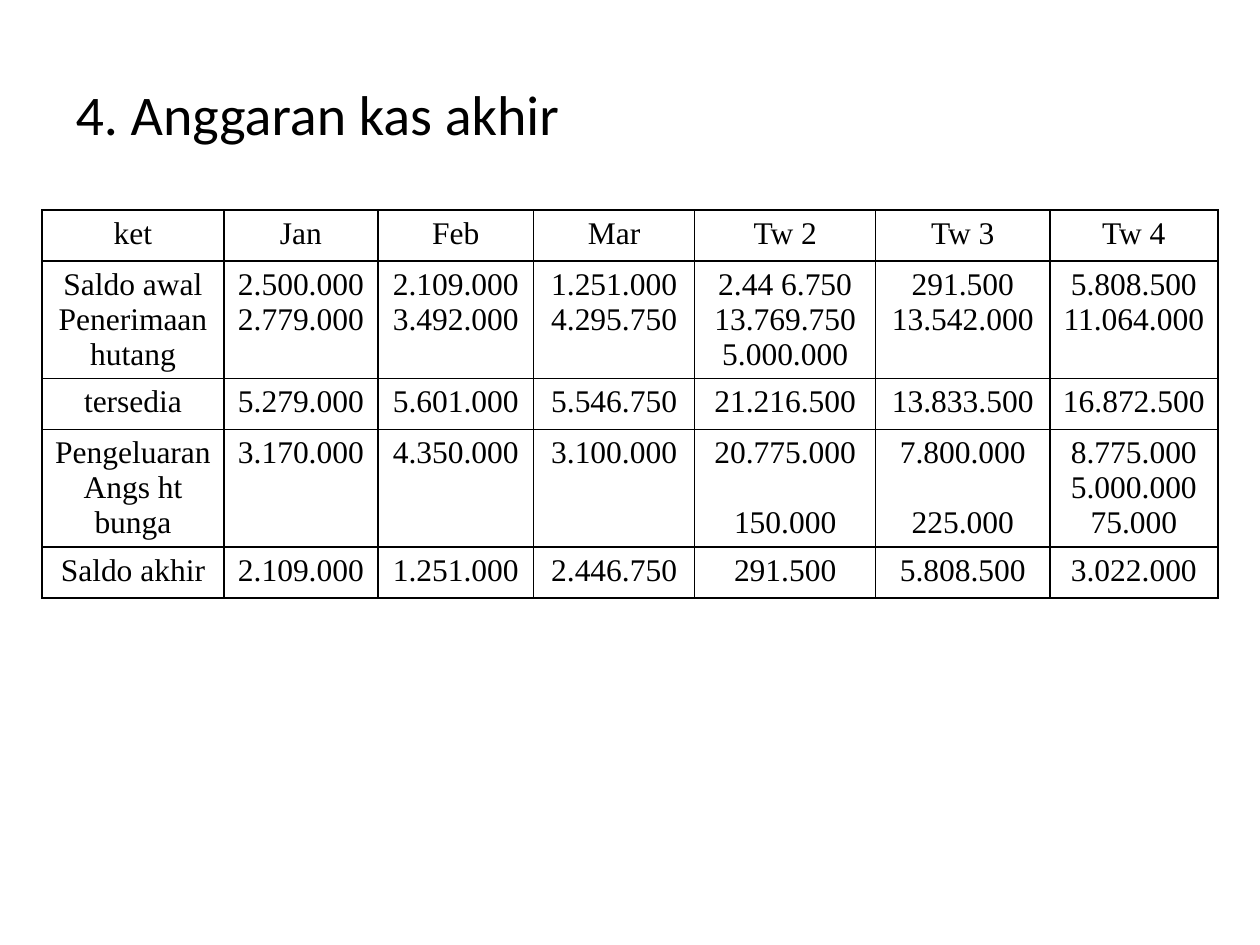
import pptx
import pptx.util
import pptx.dml.color
import pptx.enum.text
import pptx.oxml

Pt = pptx.util.Pt
ALIGN = pptx.enum.text.PP_ALIGN

# Content: a cell lists its lines; None leaves a line's height open
TITLE = "4. Anggaran kas akhir"
BUDGET = [
    [["ket"], ["Jan"], ["Feb"], ["Mar"], ["Tw 2"], ["Tw 3"], ["Tw 4"]],
    [["Saldo awal", "Penerimaan", "hutang"],
     ["2.500.000", "2.779.000"],
     ["2.109.000", "3.492.000"],
     ["1.251.000", "4.295.750"],
     ["2.44 6.750", "13.769.750", "5.000.000"],
     ["291.500", "13.542.000"],
     ["5.808.500", "11.064.000"]],
    [["tersedia"], ["5.279.000"], ["5.601.000"], ["5.546.750"],
     ["21.216.500"], ["13.833.500"], ["16.872.500"]],
    [["Pengeluaran", "Angs ht", "bunga"],
     ["3.170.000"], ["4.350.000"], ["3.100.000"],
     ["20.775.000", None, "150.000"],
     ["7.800.000", None, "225.000"],
     ["8.775.000", "5.000.000", "75.000"]],
    [["Saldo akhir"], ["2.109.000"], ["1.251.000"], ["2.446.750"],
     ["291.500"], ["5.808.500"], ["3.022.000"]],
]

THEME = {
    "ink": "000000",
    "title_font": "Calibri", "title_size": 32,
    "table_font": "Times New Roman", "table_size": 18,
    "border": 1,
}

# Layout
SLIDE_W, SLIDE_H = 720, 540
TITLE_BOX = (36, 42, 648, 60)
TABLE_LEFT, TABLE_TOP = 24, 120
COLUMN_WIDTHS = [104, 88, 89, 92, 103.5, 99.5, 96]
LINE_HEIGHT = 20
ROW_HEIGHTS = {1: 29.2, 3: 67}


def style_font(font, part):
    font.name = THEME[part + "_font"]
    font.size = Pt(THEME[part + "_size"])
    font.color.rgb = pptx.dml.color.RGBColor.from_string(THEME["ink"])


def add_borders(cell):
    properties = cell._tc.get_or_add_tcPr()
    for side in ("lnL", "lnR", "lnT", "lnB"):
        properties.append(pptx.oxml.parse_xml(
            f'<a:{side} xmlns:a="http://schemas.openxmlformats.org/drawingml/2006/main"'
            f' w="{Pt(THEME["border"])}"><a:solidFill><a:srgbClr val="{THEME["ink"]}"/>'
            f'</a:solidFill></a:{side}>'))


def fill_cell(cell, lines):
    add_borders(cell)
    cell.fill.background()
    frame = cell.text_frame
    frame.text = "\n".join(line for line in lines if line)
    paragraphs = iter(frame.paragraphs)
    gap = 0
    for line in lines:
        if line is None:
            gap += LINE_HEIGHT
            continue
        paragraph = next(paragraphs)
        paragraph.alignment = ALIGN.CENTER
        if gap:
            paragraph.space_before = Pt(gap)
            gap = 0
        style_font(paragraph.runs[0].font, "table")


def add_title(slide):
    title = slide.shapes.title
    title.left, title.top, title.width, title.height = map(Pt, TITLE_BOX)
    frame = title.text_frame
    frame.text = TITLE
    frame.vertical_anchor = pptx.enum.text.MSO_ANCHOR.TOP
    frame.paragraphs[0].alignment = ALIGN.LEFT
    style_font(frame.paragraphs[0].runs[0].font, "title")


def add_budget(slide):
    heights = [ROW_HEIGHTS[max(map(len, row))] for row in BUDGET]
    budget = slide.shapes.add_table(
        len(BUDGET), len(COLUMN_WIDTHS), Pt(TABLE_LEFT), Pt(TABLE_TOP),
        Pt(sum(COLUMN_WIDTHS)), Pt(sum(heights))).table
    budget.first_row = budget.horz_banding = False
    for column, width in zip(budget.columns, COLUMN_WIDTHS):
        column.width = Pt(width)
    for row, height, contents in zip(budget.rows, heights, BUDGET):
        row.height = Pt(height)
        for cell, lines in zip(row.cells, contents):
            fill_cell(cell, lines)


def main():
    deck = pptx.Presentation()
    deck.slide_width, deck.slide_height = Pt(SLIDE_W), Pt(SLIDE_H)
    slide = deck.slides.add_slide(deck.slide_layouts.get_by_name("Title Only"))
    add_title(slide)
    add_budget(slide)
    deck.save("out.pptx")


if __name__ == "__main__":
    main()
